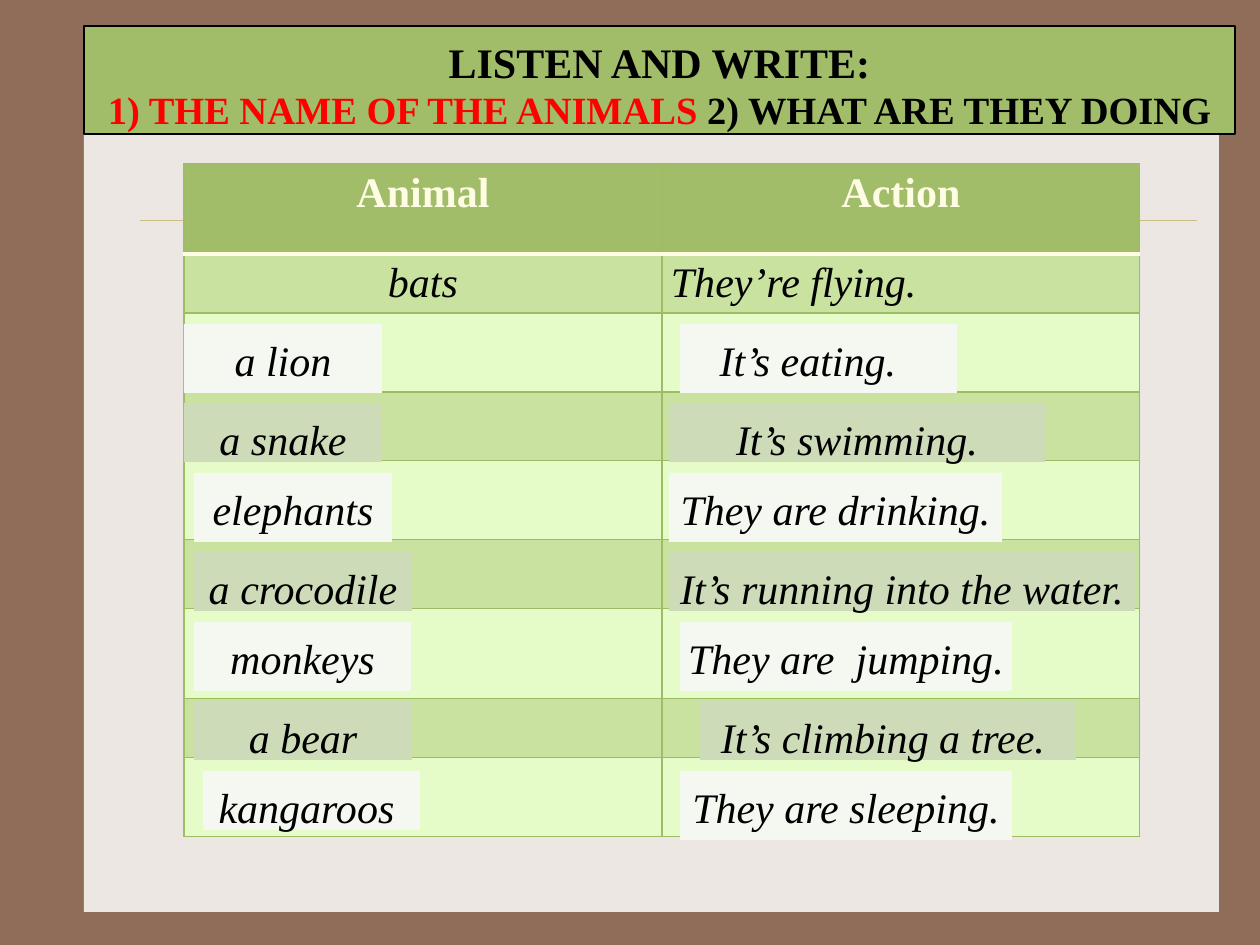
import pptx
import pptx.util
import pptx.dml.color
import pptx.enum.shapes
import pptx.enum.text
import pptx.oxml.ns
import lxml.etree
from dataclasses import dataclass

PX_PER_INCH = 126
ALIGN = pptx.enum.text.PP_ALIGN
ANCHOR = pptx.enum.text.MSO_ANCHOR
RECT = pptx.enum.shapes.MSO_SHAPE.RECTANGLE


@dataclass(frozen=True)
class Theme:
    font: str = "Times New Roman"
    size: int = 24
    small: int = 22
    back: str = "906D58"
    panel: str = "EDE7E3"
    rule: str = "CBBD83"
    green: str = "A1BD69"
    border: str = "9EBB65"
    band: str = "C9E29F"
    light: str = "E6FCC8"
    cream: str = "FEFDE3"
    black: str = "000000"
    red: str = "FF0000"
    pale_label: str = "F5F8F1"
    green_label: str = "CDDBB9"


THEME = Theme()
ROW_HEIGHTS = [90, 59, 79, 69, 79, 69, 90, 59, 79]
ANIMALS = [
    ("a lion", 184, 198, 0),
    ("a snake", 184, 198, 0),
    ("elephants", 194, 198, 0),
    ("a crocodile", 194, 218, 0),
    ("monkeys", 194, 217, 0),
    ("a bear", 194, 218, 0),
    ("kangaroos", 203, 217, 10),
]
ACTIONS = [
    ("It’s eating.", 680, 277, 21),
    ("It’s swimming.", 669, 376, 0),
    ("They are drinking.", 669, 333, 0),
    ("It’s running into the water.", 669, 466, 0),
    ("They are  jumping.", 680, 332, 0),
    ("It’s climbing a tree.", 700, 376, 10),
    ("They are sleeping.", 680, 332, 0),
]


def px(n):
    return pptx.util.Emu(round(n * 914400 / PX_PER_INCH))


def rgb(color):
    return pptx.dml.color.RGBColor.from_string(color)


def paint(fill, color):
    fill.solid()
    fill.fore_color.rgb = rgb(color)


def add_text(p, text, size=THEME.size, color=THEME.black, bold=False,
             italic=False, align=ALIGN.CENTER):
    p.alignment = align
    r = p.add_run()
    r.text = text
    r.font.name = THEME.font
    r.font.size = pptx.util.Pt(size)
    r.font.bold = bold
    r.font.italic = italic
    r.font.color.rgb = rgb(color)


def frame_text(tf, right=12):
    tf.word_wrap = False
    tf.auto_size = pptx.enum.text.MSO_AUTO_SIZE.NONE
    tf.vertical_anchor = ANCHOR.TOP
    tf.margin_left, tf.margin_right = px(12), px(right)
    tf.margin_top, tf.margin_bottom = px(10), 0


def add_rect(s, x, y, w, h, color):
    sp = s.shapes.add_shape(RECT, px(x), px(y), px(w), px(h))
    sp.shadow.inherit = False
    paint(sp.fill, color)
    sp.line.fill.background()
    return sp


def add_rule(s, x1, x2, y):
    line = s.shapes.add_connector(
        pptx.enum.shapes.MSO_CONNECTOR.STRAIGHT, px(x1), px(y), px(x2), px(y))
    line.line.color.rgb = rgb(THEME.rule)
    line.line.width = pptx.util.Pt(0.25)
    lxml.etree.SubElement(line._element.spPr, pptx.oxml.ns.qn("a:effectLst"))


def set_border(cell, side, color, width):
    qn = pptx.oxml.ns.qn
    ln = lxml.etree.SubElement(
        cell._tc.get_or_add_tcPr(), qn("a:ln" + side),
        w=str(pptx.util.Pt(width)))
    fill = lxml.etree.SubElement(ln, qn("a:solidFill"))
    lxml.etree.SubElement(fill, qn("a:srgbClr"), val=color)


def style_cell(cell, row):
    thin, divider = (THEME.border, 0.75), (THEME.cream, 2)
    edges = {"L": thin, "R": thin, "T": divider if row == 1 else thin,
             "B": divider if row == 0 else thin}
    for side, (color, width) in edges.items():
        set_border(cell, side, color, width)
    paint(cell.fill, THEME.green if row == 0
          else THEME.band if row % 2 else THEME.light)


def add_animal_table(s):
    table = s.shapes.add_table(len(ROW_HEIGHTS), 2, px(184), px(164), px(956),
                               px(sum(ROW_HEIGHTS))).table
    table.horz_banding = False
    for row, height in enumerate(ROW_HEIGHTS):
        table.rows[row].height = px(height)
        for col in range(2):
            style_cell(table.cell(row, col), row)
    for col, heading in enumerate(("Animal", "Action")):
        add_text(table.cell(0, col).text_frame.paragraphs[0], heading,
                 color=THEME.cream, bold=True)
    examples = (("bats", ALIGN.CENTER), ("They’re flying.", ALIGN.LEFT))
    for col, (text, align) in enumerate(examples):
        cell = table.cell(1, col)
        cell.vertical_anchor = ANCHOR.MIDDLE
        cell.margin_left = cell.margin_right = px(9)
        cell.margin_top = cell.margin_bottom = 0
        add_text(cell.text_frame.paragraphs[0], text, italic=True, align=align)


def add_answers(s, answers):
    for i, (text, x, w, shift) in enumerate(answers):
        pair, odd = divmod(i, 2)
        short = odd or text == "kangaroos"
        sp = add_rect(s, x, 324 + 149 * pair + 79 * odd, w, 59 if short else 69,
                      THEME.green_label if odd else THEME.pale_label)
        frame_text(sp.text_frame, right=12 + shift)
        add_text(sp.text_frame.paragraphs[0], text, italic=True)


def add_title(s):
    title = s.shapes.title
    title.left, title.top, title.width, title.height = map(px, (84, 26, 1151, 108))
    paint(title.fill, THEME.green)
    title.line.color.rgb = rgb(THEME.black)
    title.line.width = pptx.util.Pt(0.75)
    tf = title.text_frame
    frame_text(tf)
    add_text(tf.paragraphs[0], "LISTEN AND WRITE:", bold=True)
    p = tf.add_paragraph()
    add_text(p, "1) THE NAME OF THE ANIMALS ", size=THEME.small,
             color=THEME.red, bold=True)
    add_text(p, "2) WHAT ARE THEY DOING", size=THEME.small, bold=True)
    s.shapes._spTree.append(title._element)


def main():
    prs = pptx.Presentation()
    prs.slide_width, prs.slide_height = px(1260), px(945)
    s = prs.slides.add_slide(prs.slide_layouts[5])
    paint(s.background.fill, THEME.back)
    add_rect(s, 84, 32, 1135, 880, THEME.panel)
    add_rule(s, 140, 1197, 220)
    add_animal_table(s)
    add_answers(s, ANIMALS)
    add_answers(s, ACTIONS)
    add_title(s)
    prs.save("out.pptx")


if __name__ == "__main__":
    main()
